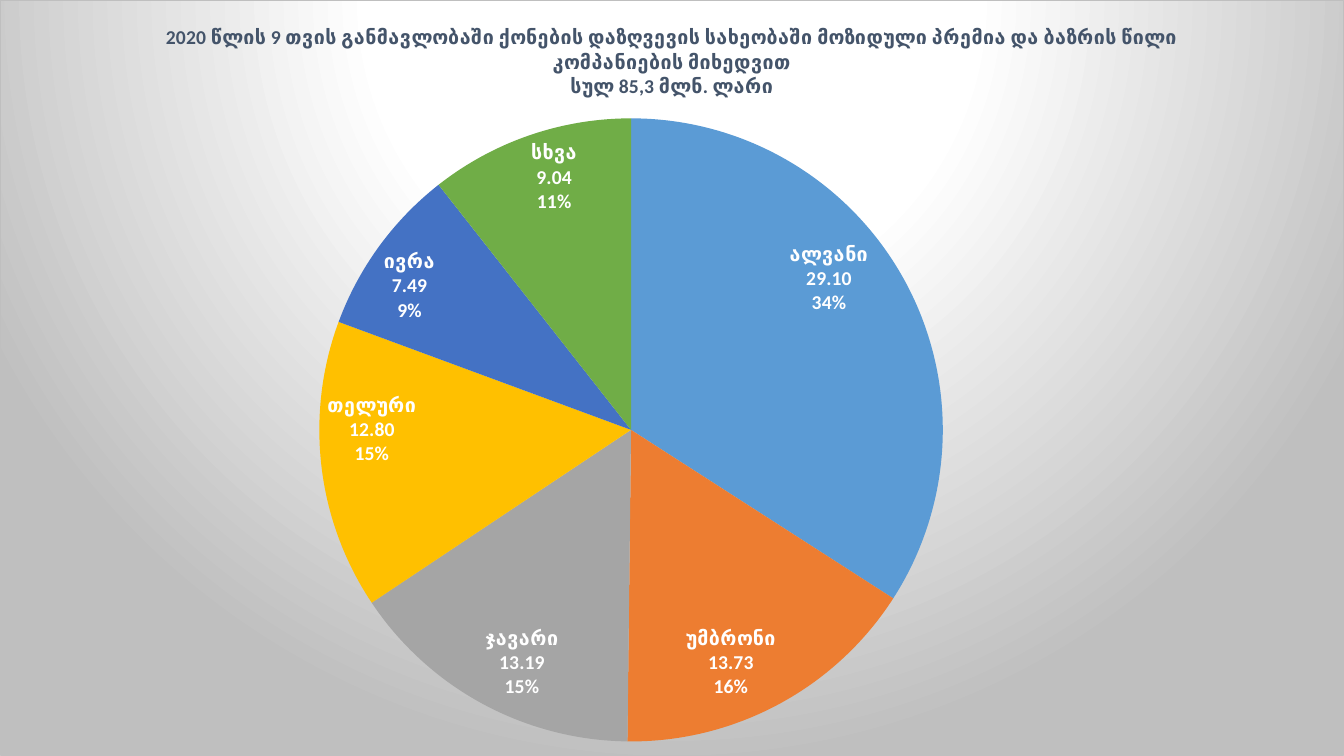
from copy import deepcopy

from lxml import etree
from pptx import Presentation
from pptx.chart.data import CategoryChartData
from pptx.dml.color import RGBColor
from pptx.enum.chart import XL_CHART_TYPE, XL_LABEL_POSITION
from pptx.oxml import parse_xml
from pptx.oxml.ns import nsdecls, qn
from pptx.util import Emu, Pt

PIE = XL_CHART_TYPE.PIE
INSIDE_END = XL_LABEL_POSITION.INSIDE_END

SLIDE_WIDTH, SLIDE_HEIGHT = 1344, 756
EMU_PER_PX = 9071.43
PIE_LEFT, PIE_TOP, PIE_SIZE = 319, 118, 624
FIRST_LABEL_SHIFT = (-31, -41)

FONT = "Calibri"
NUMBER_FORMAT = "#,##0.00"
WHITE = RGBColor(0xFF, 0xFF, 0xFF)
BLACK = RGBColor(0x00, 0x00, 0x00)
SILVER = RGBColor(0xBF, 0xBF, 0xBF)
SLATE = RGBColor(0x44, 0x54, 0x6A)
BLUE = RGBColor(0x5B, 0x9B, 0xD5)
ORANGE = RGBColor(0xED, 0x7D, 0x31)
GRAY = RGBColor(0xA5, 0xA5, 0xA5)
GOLD = RGBColor(0xFF, 0xC0, 0x00)
NAVY = RGBColor(0x44, 0x72, 0xC4)
GREEN = RGBColor(0x70, 0xAD, 0x47)

TITLE_LINES = (
    "2020 წლის 9 თვის განმავლობაში ქონების დაზღვევის სახეობაში "
    "მოზიდული პრემია და ბაზრის წილი კომპანიების მიხედვით",
    "სულ 85,3 მლნ. ლარი",
)
PREMIUMS = (
    ("ალვანი", 29.10, BLUE),
    ("უმბრონი", 13.73, ORANGE),
    ("ჯავარი", 13.19, GRAY),
    ("თელური", 12.80, GOLD),
    ("ივრა", 7.49, NAVY),
    ("სხვა", 9.04, GREEN),
)


def px(length):
    """Turn a length in px into EMU."""
    return Emu(round(length * EMU_PER_PX))


def style_font(font, size, color, bold):
    """Set the typeface, size, colour and weight of a font."""
    font.name = FONT
    font.size = Pt(size)
    font.bold = bold
    font.color.rgb = color


def manual_layout(settings):
    """Return a chart layout element holding the given settings."""
    values = "".join(f'<c:{name} val="{value}"/>' for name, value in settings)
    return parse_xml(
        f'<c:layout {nsdecls("c")}><c:manualLayout>{values}</c:manualLayout></c:layout>'
    )


def add_pie(slide):
    """Add the premium pie over the whole slide and return its chart."""
    data = CategoryChartData(number_format=NUMBER_FORMAT)
    data.categories = [company for company, _, _ in PREMIUMS]
    data.add_series("Series 1", [premium for _, premium, _ in PREMIUMS])
    frame = slide.shapes.add_chart(PIE, 0, 0, px(SLIDE_WIDTH), px(SLIDE_HEIGHT), data)
    chart = frame.chart
    chart.has_legend = False
    style_font(chart.font, 10, BLACK, False)
    plot = chart.plots[0]
    plot.vary_by_categories = True
    for index, (_, _, color) in enumerate(PREMIUMS):
        fill = plot.series[0].points[index].format.fill
        fill.solid()
        fill.fore_color.rgb = color
    return chart


def add_title(chart):
    """Write the chart title, one paragraph a line."""
    chart.has_title = True
    text_frame = chart.chart_title.text_frame
    for index, line in enumerate(TITLE_LINES):
        paragraph = text_frame.add_paragraph() if index else text_frame.paragraphs[0]
        run = paragraph.add_run()
        run.text = line
        style_font(run.font, 14, SLATE, True)
    chart.chart_title.include_in_layout = False


def add_labels(chart):
    """Label each slice with its company, premium and share on three lines."""
    labels = chart.plots[0].series[0].data_labels
    labels.show_category_name = True
    labels.show_value = True
    labels.show_percentage = True
    labels.number_format = NUMBER_FORMAT
    labels.number_format_is_linked = True
    labels.position = INSIDE_END
    style_font(labels.font, 14, WHITE, True)
    container = labels._element
    separator = etree.Element(qn("c:separator"))
    separator.text = "\n"
    leader_lines = container.find(qn("c:showLeaderLines"))
    if leader_lines is None:
        container.append(separator)
    else:
        leader_lines.addprevious(separator)
    shift_first_label(container)


def shift_first_label(container):
    """Move the label of the first slice towards the top left."""
    shift_x, shift_y = FIRST_LABEL_SHIFT
    label = etree.Element(qn("c:dLbl"))
    etree.SubElement(label, qn("c:idx")).set("val", "0")
    label.append(manual_layout((
        ("x", round(shift_x / SLIDE_WIDTH, 4)),
        ("y", round(shift_y / SLIDE_HEIGHT, 4)),
    )))
    for setting in container:
        if setting.tag != qn("c:showLeaderLines"):
            label.append(deepcopy(setting))
    container.insert(0, label)


def place_pie(chart):
    """Fix the position and size of the pie inside the chart."""
    plot_area = chart._chartSpace.chart.plotArea
    for layout in plot_area.findall(qn("c:layout")):
        plot_area.remove(layout)
    plot_area.insert(0, manual_layout((
        ("layoutTarget", "inner"),
        ("xMode", "edge"),
        ("yMode", "edge"),
        ("x", round(PIE_LEFT / SLIDE_WIDTH, 4)),
        ("y", round(PIE_TOP / SLIDE_HEIGHT, 4)),
        ("w", round(PIE_SIZE / SLIDE_WIDTH, 4)),
        ("h", round(PIE_SIZE / SLIDE_HEIGHT, 4)),
    )))


def shade_background(chart):
    """Give the chart its radial gradient and thin border."""
    stops = "".join(
        f'<a:gs pos="{position * 1000}"><a:srgbClr val="{color}"/></a:gs>'
        for position, color in ((0, WHITE), (39, WHITE), (100, SILVER))
    )
    chart._chartSpace.chart.addnext(parse_xml(
        f'<c:spPr {nsdecls("c", "a")}><a:gradFill><a:gsLst>{stops}</a:gsLst>'
        '<a:path path="circle">'
        '<a:fillToRect l="50000" t="-80000" r="50000" b="180000"/></a:path></a:gradFill>'
        f'<a:ln w="{Pt(0.75)}"><a:solidFill><a:srgbClr val="{SILVER}"/></a:solidFill></a:ln>'
        '</c:spPr>'
    ))


def main():
    """Build the slide and save it."""
    presentation = Presentation()
    presentation.slide_width = px(SLIDE_WIDTH)
    presentation.slide_height = px(SLIDE_HEIGHT)
    slide = presentation.slides.add_slide(presentation.slide_layouts[6])
    chart = add_pie(slide)
    add_title(chart)
    add_labels(chart)
    place_pie(chart)
    shade_background(chart)
    presentation.save("out.pptx")


if __name__ == "__main__":
    main()
